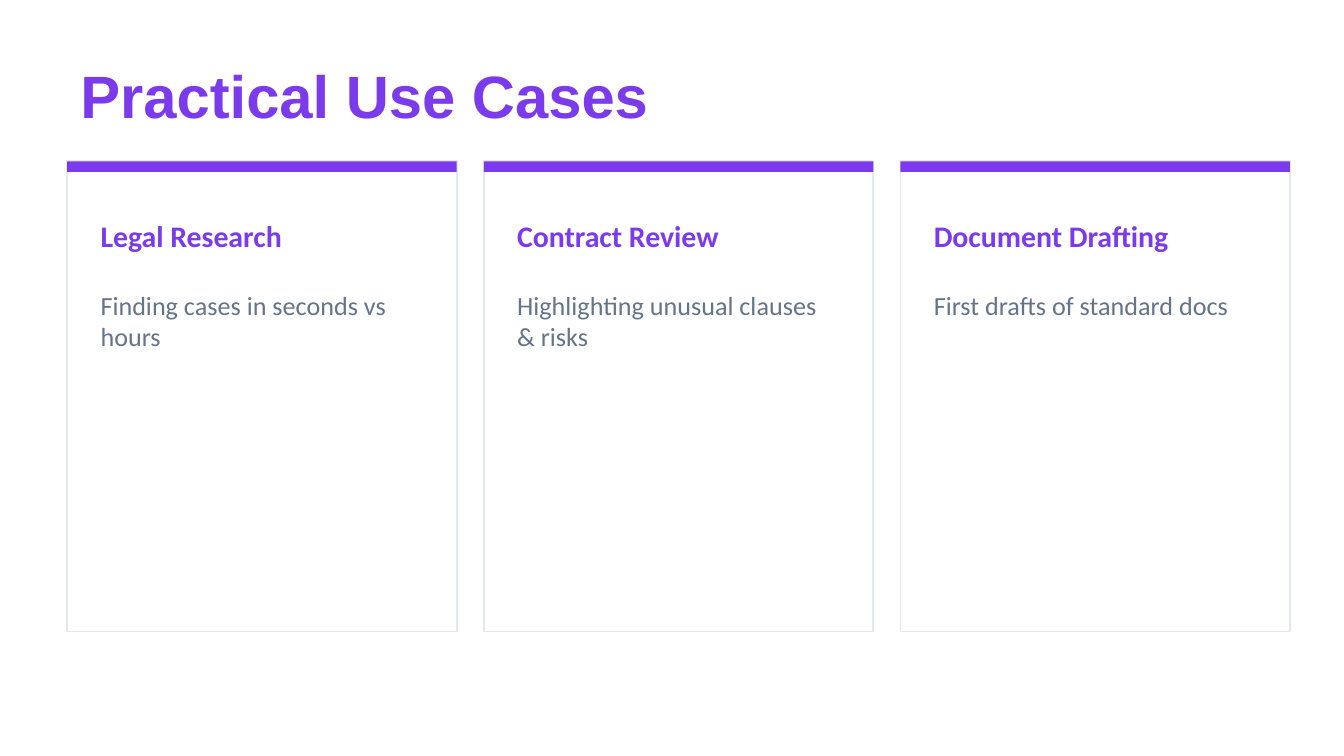
import pptx
import pptx.dml.color
import pptx.enum.shapes
import pptx.enum.text
import pptx.util

Cm = pptx.util.Cm
RGBColor = pptx.dml.color.RGBColor
ANCHOR = pptx.enum.text.MSO_ANCHOR

VIOLET = RGBColor(0x7C, 0x3A, 0xED)
SLATE = RGBColor(0x64, 0x74, 0x8B)
BORDER = RGBColor(0xE2, 0xE8, 0xF0)
WHITE = RGBColor(0xFF, 0xFF, 0xFF)

USE_CASES = [
    ("Legal Research", "Finding cases in seconds vs hours"),
    ("Contract Review", "Highlighting unusual clauses & risks"),
    ("Document Drafting", "First drafts of standard docs"),
]


def add_text(page, left, top, width, height, text, size, color,
             name="Calibri", bold=False, anchor=ANCHOR.MIDDLE):
    """Place one wrapped line of styled text in the given box."""
    box = page.shapes.add_textbox(left, top, width, height)
    frame = box.text_frame
    frame.word_wrap = True
    frame.vertical_anchor = anchor
    frame.text = text
    font = frame.paragraphs[0].runs[0].font
    font.name = name
    font.size = pptx.util.Pt(size)
    font.bold = bold
    font.color.rgb = color


def add_panel(page, left, top, width, height, fill, line=None):
    """Draw a flat rectangle, outlined only when a line colour is given."""
    panel = page.shapes.add_shape(
        pptx.enum.shapes.MSO_SHAPE.RECTANGLE, left, top, width, height)
    panel.shadow.inherit = False
    panel.fill.solid()
    panel.fill.fore_color.rgb = fill
    if line is None:
        panel.line.fill.background()
    else:
        panel.line.color.rgb = line
        panel.line.width = pptx.util.Pt(1)


def add_card(page, left, top, width, height, heading, detail):
    """Draw one use case card with its accent bar, heading and detail."""
    inset = Cm(0.38)
    text_width = width - 2 * inset
    add_panel(page, left, top, width, height, WHITE, BORDER)
    add_panel(page, left, top, width, Cm(0.2), VIOLET)
    add_text(page, left + inset, top + Cm(0.76), text_width, Cm(1.27),
             heading, 16, VIOLET, bold=True)
    add_text(page, left + inset, top + Cm(2.29), text_width, Cm(6.1),
             detail, 14, SLATE, anchor=ANCHOR.TOP)


def add_card_row(page, left, top, width, height, gap, cases):
    """Spread the use case cards evenly over the given box."""
    card_width = (width - gap * (len(cases) - 1)) // len(cases)
    for index, (heading, detail) in enumerate(cases):
        add_card(page, left + index * (card_width + gap), top,
                 card_width, height, heading, detail)


def main():
    """Build the use cases slide and save it."""
    deck = pptx.Presentation()
    deck.slide_width = Cm(25.4)
    deck.slide_height = Cm(14.29)
    page = deck.slides.add_slide(deck.slide_layouts[6])
    add_text(page, Cm(1.27), Cm(1.02), Cm(22.86), Cm(1.52),
             "Practical Use Cases", 32, VIOLET, name="Arial", bold=True)
    add_card_row(page, Cm(1.27), Cm(3.05), Cm(23.11), Cm(8.89), Cm(0.51), USE_CASES)
    deck.save("out.pptx")


if __name__ == "__main__":
    main()
